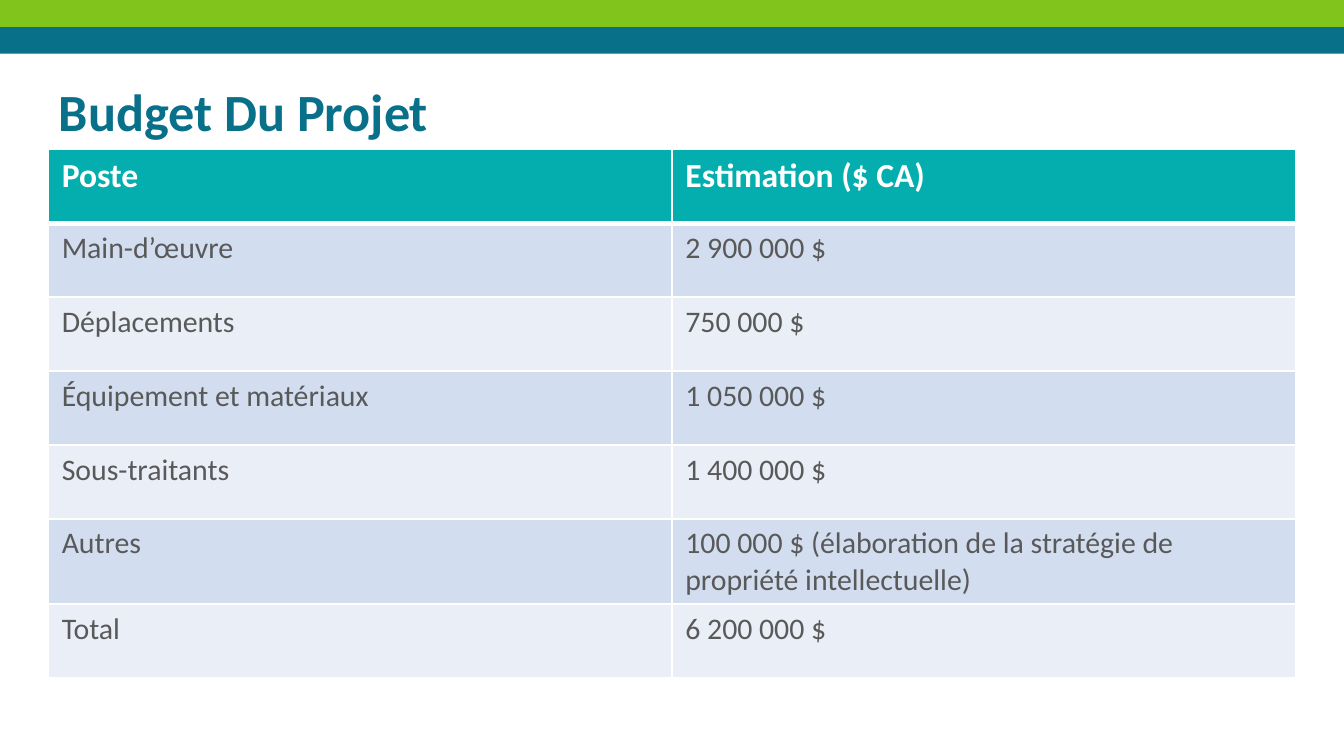
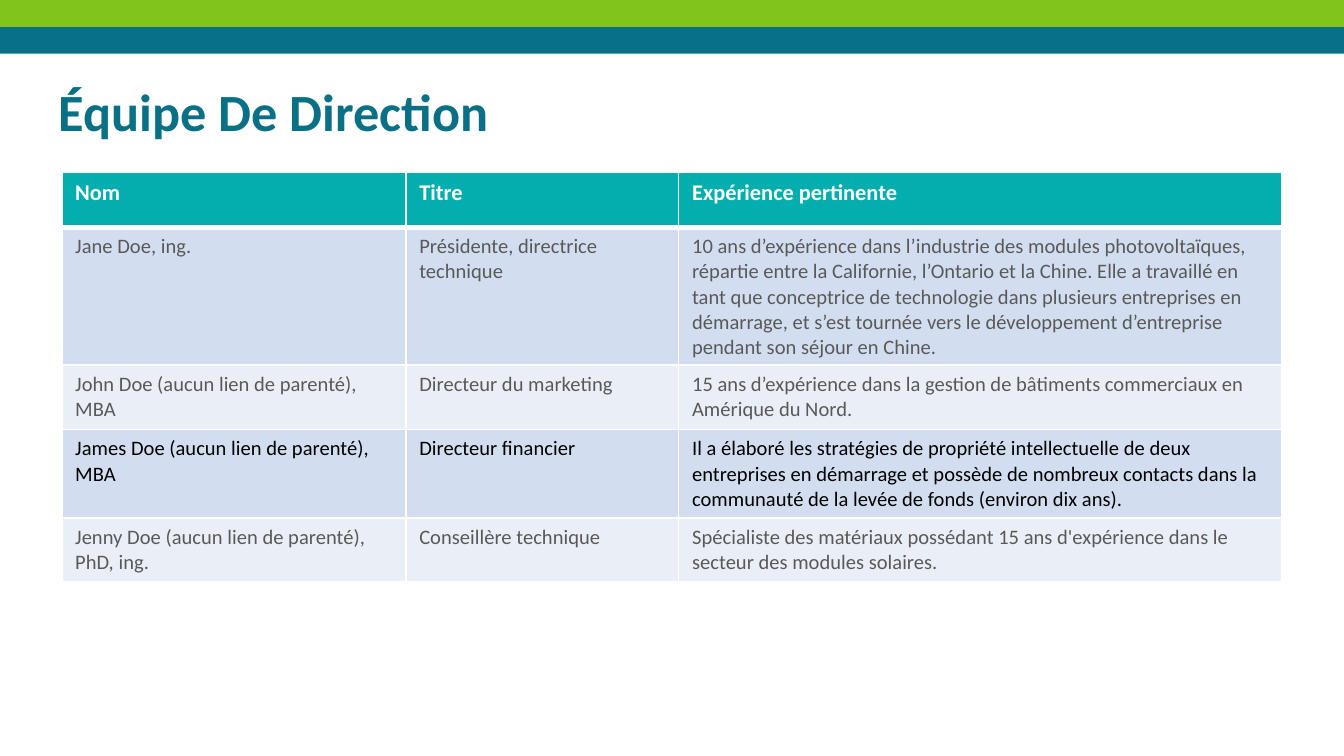
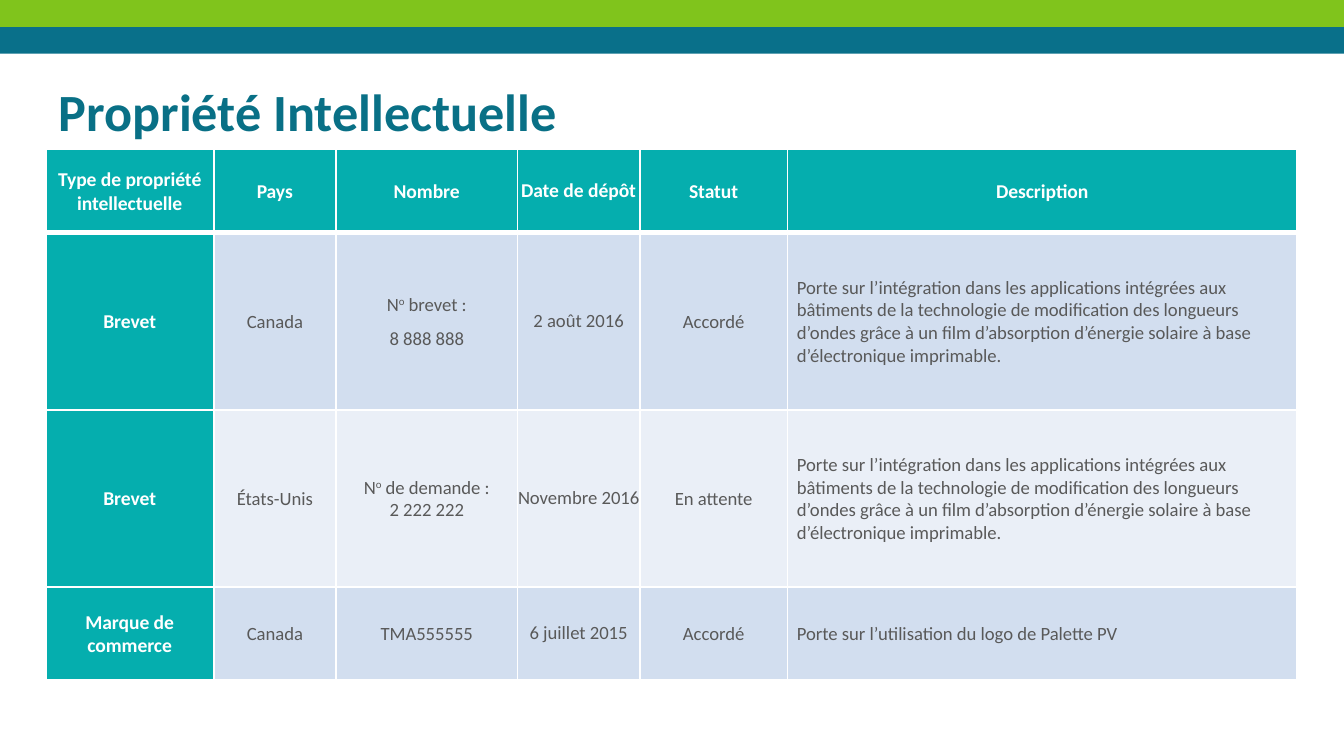
from lxml import etree
from pptx import Presentation
from pptx import util as u
from pptx.dml.color import RGBColor
from pptx.enum import shapes, text
from pptx.oxml.ns import qn

FONT = "Calibri"
GREEN, BLUE, DEEP_BLUE, TEAL = "80C41C", "09708A", "097086", "05AEAE"
WHITE, GRAY, BLACK = "FFFFFF", "595959", "000000"
STRIPES = ("EAEFF7", "D2DEEF")
PAGE_WIDTH, BAND_HEIGHT = 10, 0.2
HARD_SPACE = chr(160)
CENTER, LEFT = text.PP_ALIGN.CENTER, text.PP_ALIGN.LEFT


def color(value):
    return RGBColor.from_string(value)


def paint(target, value):
    target.fill.solid()
    target.fill.fore_color.rgb = color(value)


def write(frame, words, size=12, ink=GRAY, bold=False, align=LEFT, gap=0):
    """Newline: new paragraph; ^o^: superscript; underscore: non-breaking space."""
    frame.word_wrap = True
    for number, line in enumerate(words.replace("_", HARD_SPACE).split("\n")):
        para = frame.paragraphs[0] if number == 0 else frame.add_paragraph()
        para.alignment = align
        para.space_before = u.Pt(gap if number else 0)
        for index, part in enumerate(line.split("^")):
            span = para.add_run()
            span.text = part
            span.font.name = FONT
            span.font.size = u.Pt(size)
            span.font.bold = bold
            span.font.color.rgb = color(ink)
            if index % 2:
                span.font._element.set("baseline", "30000")


def set_margins(target, margins):
    (target.margin_left, target.margin_top,
     target.margin_right, target.margin_bottom) = map(u.Inches, margins)


def add_band(page, top, fill):
    band = page.shapes.add_shape(
        shapes.MSO_SHAPE.RECTANGLE, 0, u.Inches(top),
        u.Inches(PAGE_WIDTH), u.Inches(BAND_HEIGHT))
    band.shadow.inherit = False
    paint(band, fill)
    band.line.fill.background()


def start_page(deck, title, ink=DEEP_BLUE):
    page = deck.slides.add_slide(deck.slide_layouts[6])
    add_band(page, BAND_HEIGHT, BLUE)
    add_band(page, 0, GREEN)
    box = page.shapes.add_textbox(*map(u.Inches, (0.34, 0.49, 9.32, 0.63)))
    set_margins(box.text_frame, (0.1, 0.1, 0.1, 0.1))
    write(box.text_frame, title, size=28, ink=ink, bold=True)
    return page


def draw_borders(cell, row):
    """White rules, thicker between the header and the first body row."""
    props = cell._tc.get_or_add_tcPr()
    widths = {"a:lnL": 1, "a:lnR": 1, "a:lnT": 3 if row == 1 else 1,
              "a:lnB": 3 if row == 0 else 1}
    for side, width in widths.items():
        line = etree.SubElement(props, qn(side), w=str(u.Pt(width)))
        fill = etree.SubElement(line, qn("a:solidFill"))
        etree.SubElement(fill, qn("a:srgbClr"), val=WHITE)


def add_grid(page, left, top, widths, heights, rows, head_size, body_size,
             inks=None, head_column=False, style_cell=None):
    """style_cell(cell, row, column) sets the cell's layout and returns text format."""
    frame = page.shapes.add_table(
        len(rows), len(widths), u.Inches(left), u.Inches(top),
        u.Inches(sum(widths)), u.Inches(sum(heights)))
    table = frame.table
    table.first_col = head_column
    for column, width in zip(table.columns, widths):
        column.width = u.Inches(width)
    for line, height in zip(table.rows, heights):
        line.height = u.Inches(height)
    for row, values in enumerate(rows):
        for column, words in enumerate(values):
            cell = table.cell(row, column)
            is_head = row == 0 or (head_column and column == 0)
            draw_borders(cell, row)
            paint(cell, TEAL if is_head else STRIPES[row % 2])
            style = style_cell(cell, row, column) if style_cell else {}
            write(cell.text_frame, words, bold=is_head,
                  size=head_size if is_head else body_size,
                  ink=WHITE if is_head else (inks or {}).get(row, GRAY), **style)


def budget_page(deck):
    rows = [
        ("Poste", "Estimation ($ CA)"),
        ("Main-d’œuvre", "2_900_000 $"),
        ("Déplacements", "750_000 $"),
        ("Équipement et matériaux", "1_050_000 $"),
        ("Sous-traitants", "1_400_000 $"),
        ("Autres", "100_000 $ (élaboration de la stratégie de propriété intellectuelle)"),
        ("Total", "6_200_000 $"),
    ]
    page = start_page(deck, "Budget Du Projet", ink=BLUE)
    add_grid(page, 0.36, 1.11, [4.64] * 2, [0.55] * len(rows), rows, 18, 16)


def team_page(deck):
    rows = [
        ("Nom", "Titre", "Expérience pertinente"),
        ("Jane Doe, ing.", "Présidente, directrice technique",
         "10 ans d’expérience dans l’industrie des modules photovoltaïques, "
         "répartie entre la Californie, l’Ontario et la Chine. Elle a travaillé "
         "en tant que conceptrice de technologie dans plusieurs entreprises en "
         "démarrage, et s’est tournée vers le développement d’entreprise "
         "pendant son séjour en Chine."),
        ("John Doe (aucun lien de parenté), MBA", "Directeur du marketing",
         "15 ans d’expérience dans la gestion de bâtiments commerciaux en "
         "Amérique du Nord."),
        ("James Doe (aucun lien de parenté), MBA", "Directeur financier",
         "Il a élaboré les stratégies de propriété intellectuelle de deux "
         "entreprises en démarrage et possède de nombreux contacts dans la "
         "communauté de la levée de fonds (environ dix ans)."),
        ("Jenny Doe (aucun lien de parenté), PhD, ing.", "Conseillère technique",
         "Spécialiste des matériaux possédant 15 ans d'expérience dans le "
         "secteur des modules solaires."),
    ]

    def style_cell(cell, row, column):
        cell.margin_bottom = u.Inches(0.06)
        return {}

    page = start_page(deck, "Équipe De Direction")
    add_grid(page, 0.46, 1.28, [2.56, 2.03, 4.49], [0.41] * 2 + [0.35] * 3,
             rows, 12, 11, inks={3: BLACK}, style_cell=style_cell)


def property_page(deck):
    film = ("Porte sur l’intégration dans les applications intégrées aux "
            "bâtiments de la technologie de modification des longueurs d’ondes "
            "grâce à un film d’absorption d’énergie solaire à base "
            "d’électronique imprimable.")
    rows = [
        ("Type_de propriété intellectuelle", "Pays", "Nombre", "Date de dépôt",
         "Statut", "Description"),
        ("Brevet", "Canada", "N^o^ brevet :\n8_888_888", "2_août 2016",
         "Accordé", film),
        ("Brevet", "États-Unis", "N^o^ de demande : 2_222_222", "Novembre 2016",
         "En attente", film),
        ("Marque de commerce", "Canada", "TMA555555", "6 juillet 2015",
         "Accordé", "Porte sur l’utilisation du logo de Palette PV"),
    ]
    date_column, description_column = 3, 5

    def style_cell(cell, row, column):
        cell.vertical_anchor = text.MSO_ANCHOR.MIDDLE
        set_margins(cell, (0,) * 4 if column == date_column
                    else (0.07, 0.01, 0.07, 0))
        is_prose = row > 0 and column == description_column
        return {"align": LEFT if is_prose else CENTER, "gap": 6}

    page = start_page(deck, "Propriété Intellectuelle")
    add_grid(page, 0.34, 1.11, [1.25, 0.91, 1.35, 0.91, 1.1, 3.79],
             [0.62, 1.32, 1.32, 0.69], rows, 10.5, 10,
             head_column=True, style_cell=style_cell)


def main():
    deck = Presentation()
    deck.slide_width = u.Inches(PAGE_WIDTH)
    deck.slide_height = u.Inches(PAGE_WIDTH * 9 / 16)
    for build_page in (budget_page, team_page, property_page):
        build_page(deck)
    deck.save("out.pptx")


if __name__ == "__main__":
    main()
